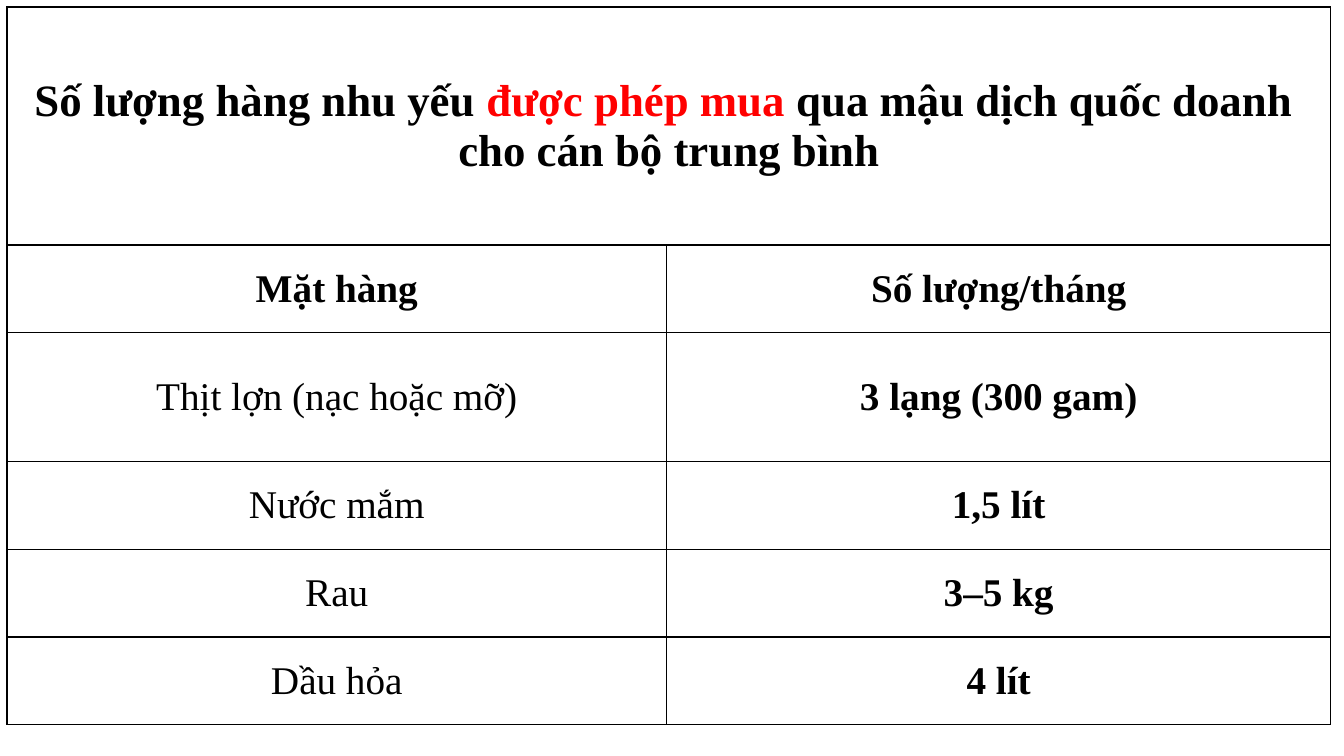
from dataclasses import dataclass

from lxml import etree
from pptx import Presentation
from pptx.dml.color import RGBColor
from pptx.enum.text import MSO_ANCHOR, PP_ALIGN
from pptx.oxml.ns import qn
from pptx.table import _Cell
from pptx.util import Emu, Inches, Pt

CENTER = PP_ALIGN.CENTER
MIDDLE = MSO_ANCHOR.MIDDLE
BLANK_LAYOUT = 6


@dataclass(frozen=True)
class Theme:
    font: str = "Times New Roman"
    ink: str = "000000"
    accent: str = "FF0000"
    paper: str = "FFFFFF"
    heading_size: int = 32
    body_size: int = 28
    border_width: int = 1


@dataclass(frozen=True)
class Span:
    text: str
    bold: bool = True
    color: str = Theme.ink


@dataclass(frozen=True)
class Ration:
    goods: str
    amount: str
    height: float = 0.87


THEME = Theme()
MARGIN = Inches(0.07)
COLUMN_WIDTHS = (6.54, 6.59)
HEADING_HEIGHT = 2.36

HEADING = [
    [
        Span("Số lượng hàng nhu yếu "),
        Span("được phép mua ", color=THEME.accent),
        Span("qua mậu dịch quốc doanh "),
    ],
    [Span("cho cán bộ trung bình")],
]
COLUMN_LABELS = Ration("Mặt hàng", "Số lượng/tháng")
RATIONS = [
    Ration("Thịt lợn (nạc hoặc mỡ)", "3 lạng (300 gam)", 1.28),
    Ration("Nước mắm", "1,5 lít"),
    Ration("Rau", "3–5 kg"),
    Ration("Dầu hỏa", "4 lít"),
]


def style_cell(cell: _Cell) -> None:
    """Set the fill, insets, anchor and four borders of a cell."""
    cell.fill.solid()
    cell.fill.fore_color.rgb = RGBColor.from_string(THEME.paper)
    cell.vertical_anchor = MIDDLE
    cell.margin_left = cell.margin_right = Inches(0.07)
    cell.margin_top = cell.margin_bottom = Inches(0.03)
    properties = cell._tc.get_or_add_tcPr()
    for position, side in enumerate(("a:lnL", "a:lnR", "a:lnT", "a:lnB")):
        border = etree.Element(qn(side), w=str(Pt(THEME.border_width)))
        fill = etree.SubElement(border, qn("a:solidFill"))
        etree.SubElement(fill, qn("a:srgbClr"), val=THEME.ink)
        properties.insert(position, border)


def write_cell(cell: _Cell, lines: list[list[Span]], size: int) -> None:
    """Write centred lines of text, run by run."""
    frame = cell.text_frame
    for index, line in enumerate(lines):
        paragraph = frame.add_paragraph() if index else frame.paragraphs[0]
        paragraph.alignment = CENTER
        for span in line:
            run = paragraph.add_run()
            run.text = span.text
            run.font.name = THEME.font
            run.font.size = Pt(size)
            run.font.bold = span.bold
            run.font.color.rgb = RGBColor.from_string(span.color)


def main() -> None:
    deck = Presentation()
    deck.slide_width, deck.slide_height = Inches(13.33), Inches(7.5)
    slide = deck.slides.add_slide(deck.slide_layouts[BLANK_LAYOUT])

    # Table grid
    entries = [COLUMN_LABELS, *RATIONS]
    row_heights = [HEADING_HEIGHT, *(entry.height for entry in entries)]
    rations = slide.shapes.add_table(
        len(row_heights), len(COLUMN_WIDTHS), MARGIN, MARGIN,
        Emu(Inches(sum(COLUMN_WIDTHS))), Emu(Inches(sum(row_heights))),
    ).table
    rations.first_row = rations.horz_banding = False
    for column, width in zip(rations.columns, COLUMN_WIDTHS):
        column.width = Inches(width)
    for row, height in zip(rations.rows, row_heights):
        row.height = Inches(height)
    for cell in rations.iter_cells():
        style_cell(cell)

    # Heading across both columns
    heading = rations.cell(0, 0)
    heading.merge(rations.cell(0, 1))
    write_cell(heading, HEADING, THEME.heading_size)

    # Column labels and monthly rations
    for row_index, entry in enumerate(entries, start=1):
        goods = Span(entry.goods, bold=entry is COLUMN_LABELS)
        for column_index, span in enumerate((goods, Span(entry.amount))):
            write_cell(rations.cell(row_index, column_index), [[span]], THEME.body_size)

    deck.save("out.pptx")


if __name__ == "__main__":
    main()
